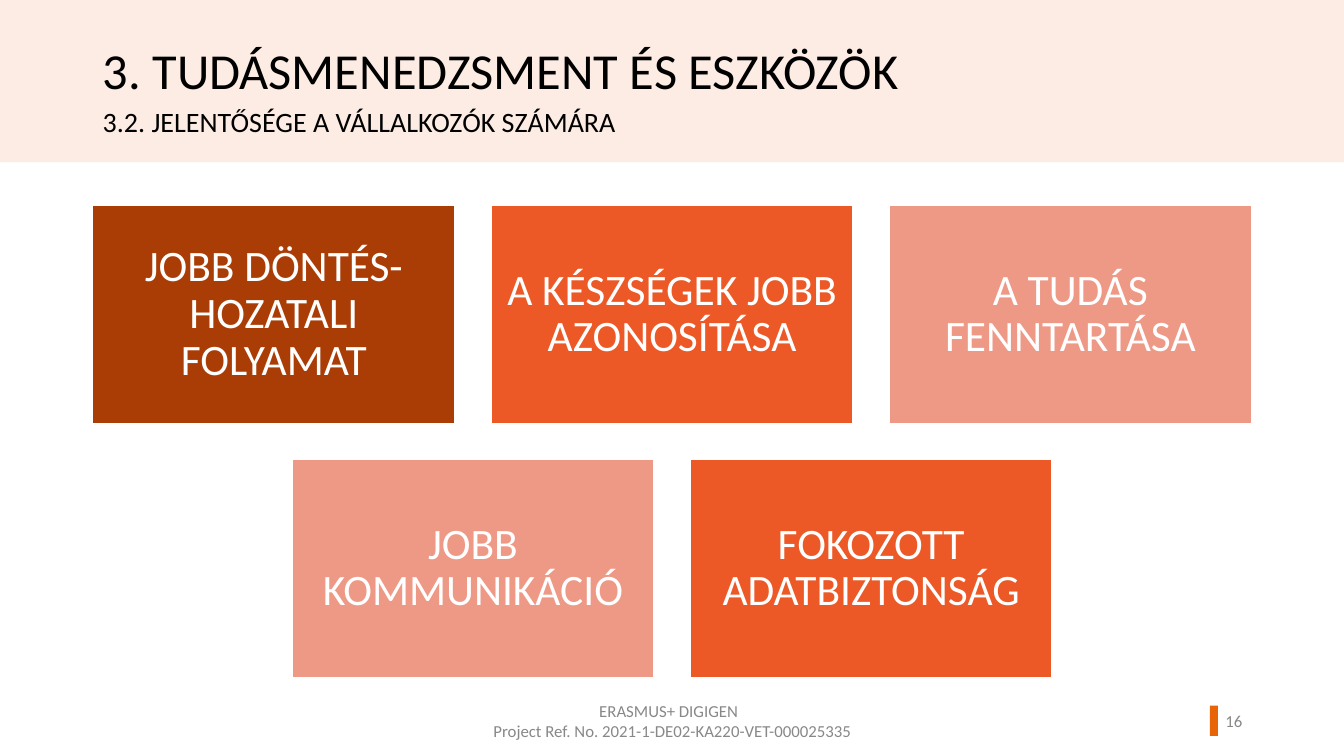
from pptx import Presentation
from pptx.dml.color import RGBColor
from pptx.enum.shapes import MSO_SHAPE as Shape
from pptx.enum.text import MSO_ANCHOR as Anchor, MSO_AUTO_SIZE as AutoSize, PP_ALIGN as Align
from pptx.util import Inches, Pt

FONT = "Calibri"
BLACK, WHITE, GREY = "000000", "FFFFFF", "888888"
BAND, ACCENT = "FDECE3", "E86507"
BROWN, ORANGE, SALMON = "AA3D06", "EC5826", "EE9886"

SLIDE_WIDTH = 13.33
TILE_WIDTH, TILE_HEIGHT, TILE_GAP = 3.59, 2.16, 0.36
TILES_TOP = 2.04
TILE_ROWS = [
    [
        (["JOBB DÖNTÉS-", "HOZATALI FOLYAMAT"], BROWN),
        (["A KÉSZSÉGEK JOBB AZONOSÍTÁSA"], ORANGE),
        (["A TUDÁS FENNTARTÁSA"], SALMON),
    ],
    [
        (["JOBB KOMMUNIKÁCIÓ"], SALMON),
        (["FOKOZOTT ADATBIZTONSÁG"], ORANGE),
    ],
]


def color(value):
    return RGBColor.from_string(value)


def write(box, lines, size, ink, align=Align.LEFT, anchor=Anchor.TOP,
          spacing=1.0, side=0.1, edge=0.05):
    frame = box.text_frame
    frame.word_wrap = True
    frame.auto_size = AutoSize.NONE
    frame.vertical_anchor = anchor
    frame.margin_left = frame.margin_right = Inches(side)
    frame.margin_top = frame.margin_bottom = Inches(edge)
    for index, line in enumerate(lines):
        para = frame.add_paragraph() if index else frame.paragraphs[0]
        para.alignment = align
        para.line_spacing = spacing
        para.space_before = Pt(0)
        span = para.add_run()
        span.text = line
        span.font.name = FONT
        span.font.size = Pt(size)
        span.font.color.rgb = color(ink)


def add_rectangle(page, left, top, width, height, fill, outline=None):
    box = page.shapes.add_shape(Shape.RECTANGLE, Inches(left), Inches(top),
                                Inches(width), Inches(height))
    box.shadow.inherit = False
    box.fill.solid()
    box.fill.fore_color.rgb = color(fill)
    if outline:
        box.line.color.rgb = color(outline)
        box.line.width = Pt(1)
    else:
        box.line.fill.background()
    return box


def add_text(page, left, top, width, height, lines, size, ink, **style):
    box = page.shapes.add_textbox(Inches(left), Inches(top), Inches(width), Inches(height))
    write(box, lines, size, ink, **style)


def add_title(page, text):
    title = page.shapes.title
    title.left, title.top = Inches(0.92), Inches(0.41)
    title.width, title.height = Inches(10.85), Inches(0.85)
    write(title, [text], 36, BLACK, spacing=0.9)
    # Bring the title in front of the header band
    title.element.getparent().append(title.element)


def add_tiles(page):
    """Lay out the tiles in rows, each row centred on the slide."""
    for row, tiles in enumerate(TILE_ROWS):
        row_width = len(tiles) * (TILE_WIDTH + TILE_GAP) - TILE_GAP
        start = (SLIDE_WIDTH - row_width) / 2
        top = TILES_TOP + row * (TILE_HEIGHT + TILE_GAP)
        for column, (lines, fill) in enumerate(tiles):
            left = start + column * (TILE_WIDTH + TILE_GAP)
            tile = add_rectangle(page, left, top, TILE_WIDTH, TILE_HEIGHT, fill, WHITE)
            write(tile, lines, 31, WHITE, Align.CENTER, Anchor.MIDDLE,
                  spacing=0.9, side=0.13, edge=0.13)


def add_footer(page):
    add_rectangle(page, 12, 7, 0.08, 0.3, ACCENT)
    add_text(page, 4.42, 6.95, 4.5, 0.4,
             ["ERASMUS+ DIGIGEN  ", "Project Ref. No. 2021-1-DE02-KA220-VET-000025335"],
             12, GREY, align=Align.CENTER, anchor=Anchor.MIDDLE)
    add_text(page, 11.77, 6.95, 0.65, 0.4, ["16"], 12, GREY,
             align=Align.RIGHT, anchor=Anchor.MIDDLE)


def main():
    deck = Presentation()
    deck.slide_width, deck.slide_height = Inches(SLIDE_WIDTH), Inches(7.5)
    page = deck.slides.add_slide(deck.slide_layouts.get_by_name("Title Only"))
    add_rectangle(page, 0, 0, SLIDE_WIDTH, 1.61, BAND)
    add_footer(page)
    add_title(page, "3. TUDÁSMENEDZSMENT ÉS ESZKÖZÖK")
    add_text(page, 0.92, 1.03, 10.85, 0.85, ["3.2. JELENTŐSÉGE A VÁLLALKOZÓK SZÁMÁRA"],
             20, BLACK, spacing=0.9)
    add_tiles(page)
    deck.save("out.pptx")


if __name__ == "__main__":
    main()
